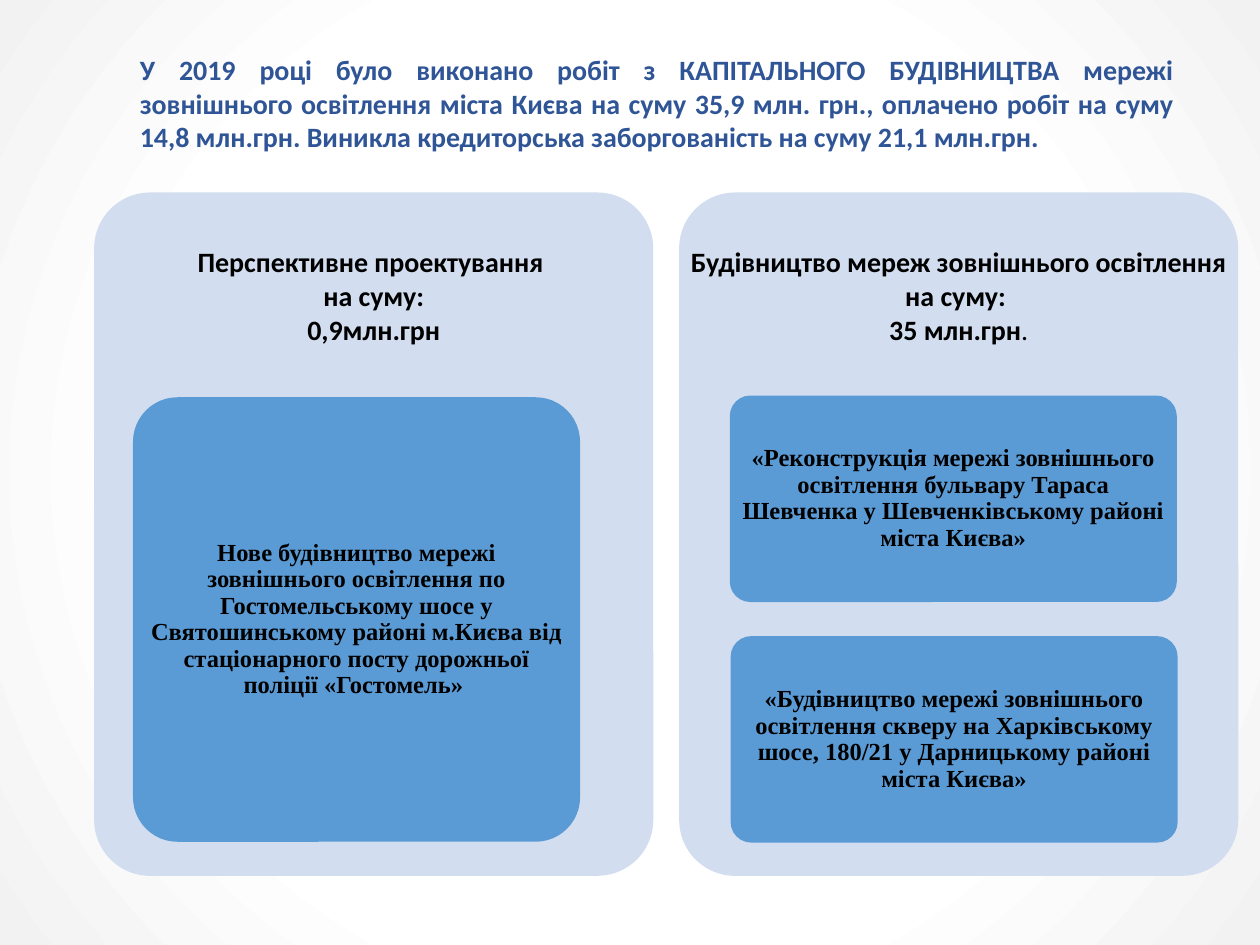
from lxml.etree import SubElement
from pptx import Presentation
from pptx.dml.color import RGBColor
from pptx.enum.shapes import MSO_SHAPE
from pptx.enum.text import MSO_ANCHOR, MSO_AUTO_SIZE, PP_ALIGN
from pptx.oxml.ns import qn
from pptx.util import Pt

# Content
TITLE = ("У 2019 році було виконано робіт з КАПІТАЛЬНОГО БУДІВНИЦТВА мережі "
         "зовнішнього освітлення міста Києва на суму 35,9 млн. грн., оплачено робіт "
         "на суму 14,8 млн.грн. Виникла кредиторська заборгованість на суму 21,1 млн.грн.")
# Each heading line is a list of (text, bold); each project is text, left, top, height
PANELS = [
    {"heading": [[("Перспективне проектування ", True)],
                 [("на суму:", True)],
                 [("0,9млн.грн", True)]],
     "projects": [
         ("Нове будівництво мережі зовнішнього освітлення по Гостомельському шосе у "
          "Святошинському районі м.Києва від стаціонарного посту дорожньої поліції "
          "«Гостомель» ", 76, 227, 254)]},
    {"heading": [[("Будівництво мереж зовнішнього освітлення", True)],
                 [("на суму: ", True)],
                 [("35 млн.грн", True), (".", False)]],
     "projects": [
         ("«Реконструкція мережі зовнішнього освітлення бульвару Тараса Шевченка "
          "у Шевченківському районі міста Києва»", 417, 226, 118),
         ("«Будівництво мережі зовнішнього освітлення скверу на Харківському шосе, "
          "180/21 у Дарницькому районі міста Києва»", 417.5, 363.5, 118)]},
]

# Look
WHITE = RGBColor(0xFF, 0xFF, 0xFF)
EDGE_GREY = RGBColor(0xF2, 0xF2, 0xF2)
TITLE_BLUE = RGBColor(0x2F, 0x55, 0x97)
PANEL_BLUE = RGBColor(0xD2, 0xDE, 0xEF)
CARD_BLUE = RGBColor(0x5B, 0x9B, 0xD5)
BLACK = RGBColor(0, 0, 0)
TITLE_FONT = {"name": "Calibri", "size": Pt(16), "bold": True}
HEADING_FONT = {"name": "Calibri", "size": Pt(16)}
PROJECT_FONT = {"name": "Times New Roman", "size": Pt(14), "bold": True}

# Layout, in points
PANEL_LEFT, PANEL_TOP, PANEL_WIDTH, PANEL_HEIGHT = 53.8, 110, 319.5, 390.5
PANEL_STEP = 334.3
HEADING_HEIGHT = 117.5
CARD_WIDTH = 255.5
CORNER = 0.1


def set_all(target, values):
    for name, value in values.items():
        setattr(target, name, value)


def set_font(font, values, color):
    set_all(font, values)
    font.color.rgb = color


def set_frame(frame, side, end, anchor=MSO_ANCHOR.MIDDLE):
    set_all(frame, {"word_wrap": True, "auto_size": MSO_AUTO_SIZE.NONE,
                    "vertical_anchor": anchor,
                    "margin_left": Pt(side), "margin_right": Pt(side),
                    "margin_top": Pt(end), "margin_bottom": Pt(end)})


def add_rounded(slide, box, color):
    rounded = slide.shapes.add_shape(MSO_SHAPE.ROUNDED_RECTANGLE, *map(Pt, box))
    rounded.adjustments[0] = CORNER
    rounded.shadow.inherit = False
    rounded.fill.solid()
    rounded.fill.fore_color.rgb = color
    rounded.line.fill.background()
    return rounded


def add_heading(slide, left, lines):
    box = (left, PANEL_TOP, PANEL_WIDTH, HEADING_HEIGHT)
    frame = slide.shapes.add_textbox(*map(Pt, box)).text_frame
    set_frame(frame, 4.8, 4.8)
    for index, line in enumerate(lines):
        paragraph = frame.add_paragraph() if index else frame.paragraphs[0]
        paragraph.alignment = PP_ALIGN.CENTER
        for text, bold in line:
            run = paragraph.add_run()
            run.text = text
            set_font(run.font, HEADING_FONT | {"bold": bold}, BLACK)


def add_project(slide, text, left, top, height):
    frame = add_rounded(slide, (left, top, CARD_WIDTH, height), CARD_BLUE).text_frame
    set_frame(frame, 2.8, 2.1)
    paragraph = frame.paragraphs[0]
    paragraph.text = text
    set_all(paragraph, {"alignment": PP_ALIGN.CENTER, "line_spacing": 0.9,
                        "space_after": Pt(4.9)})
    set_font(paragraph.runs[0].font, PROJECT_FONT, BLACK)


def set_background(slide):
    fill = slide.background.fill
    fill.gradient()
    for stop, position, color in zip(fill.gradient_stops, (0.63, 1), (WHITE, EDGE_GREY)):
        stop.position = position
        stop.color.rgb = color
    # Radial shading from the centre
    linear = next(slide.element.iter(qn("a:lin")))
    gradient = linear.getparent()
    gradient.remove(linear)
    circle = SubElement(gradient, qn("a:path"), {"path": "circle"})
    SubElement(circle, qn("a:fillToRect"), dict.fromkeys("ltrb", "50000"))


def add_title(slide):
    title = slide.shapes.title
    set_all(title, {"left": Pt(72.7), "top": Pt(26.6),
                    "width": Pt(605.5), "height": Pt(65.5)})
    set_frame(title.text_frame, 7.2, 3.6, MSO_ANCHOR.TOP)
    paragraph = title.text_frame.paragraphs[0]
    paragraph.text = TITLE
    paragraph.alignment = PP_ALIGN.JUSTIFY
    set_font(paragraph.runs[0].font, TITLE_FONT, TITLE_BLUE)


def main():
    presentation = Presentation()
    set_all(presentation, {"slide_width": Pt(720), "slide_height": Pt(540)})
    slide = presentation.slides.add_slide(presentation.slide_layouts.get_by_name("Title Only"))
    set_background(slide)
    add_title(slide)

    # Panels with a heading and project cards
    for index, panel in enumerate(PANELS):
        left = PANEL_LEFT + index * PANEL_STEP
        add_rounded(slide, (left, PANEL_TOP, PANEL_WIDTH, PANEL_HEIGHT), PANEL_BLUE)
        add_heading(slide, left, panel["heading"])
        for project in panel["projects"]:
            add_project(slide, *project)

    presentation.save("out.pptx")


if __name__ == "__main__":
    main()
